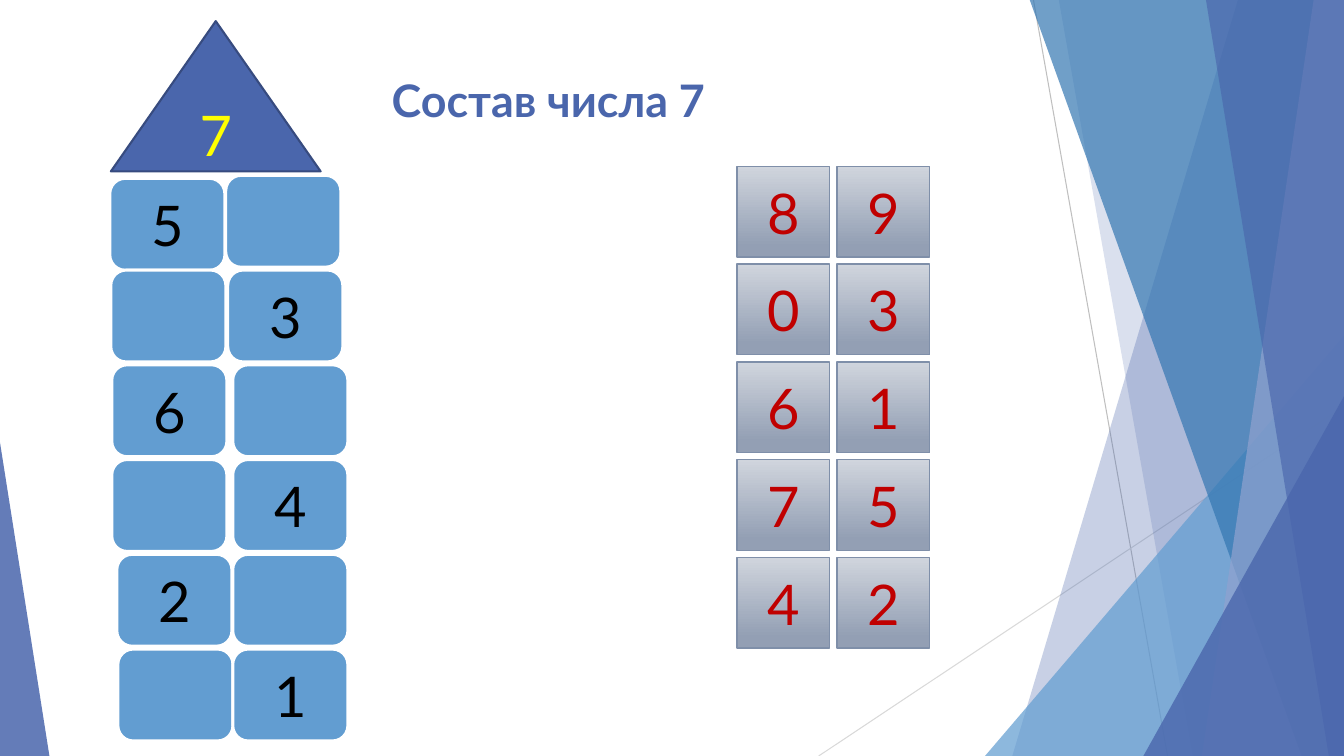
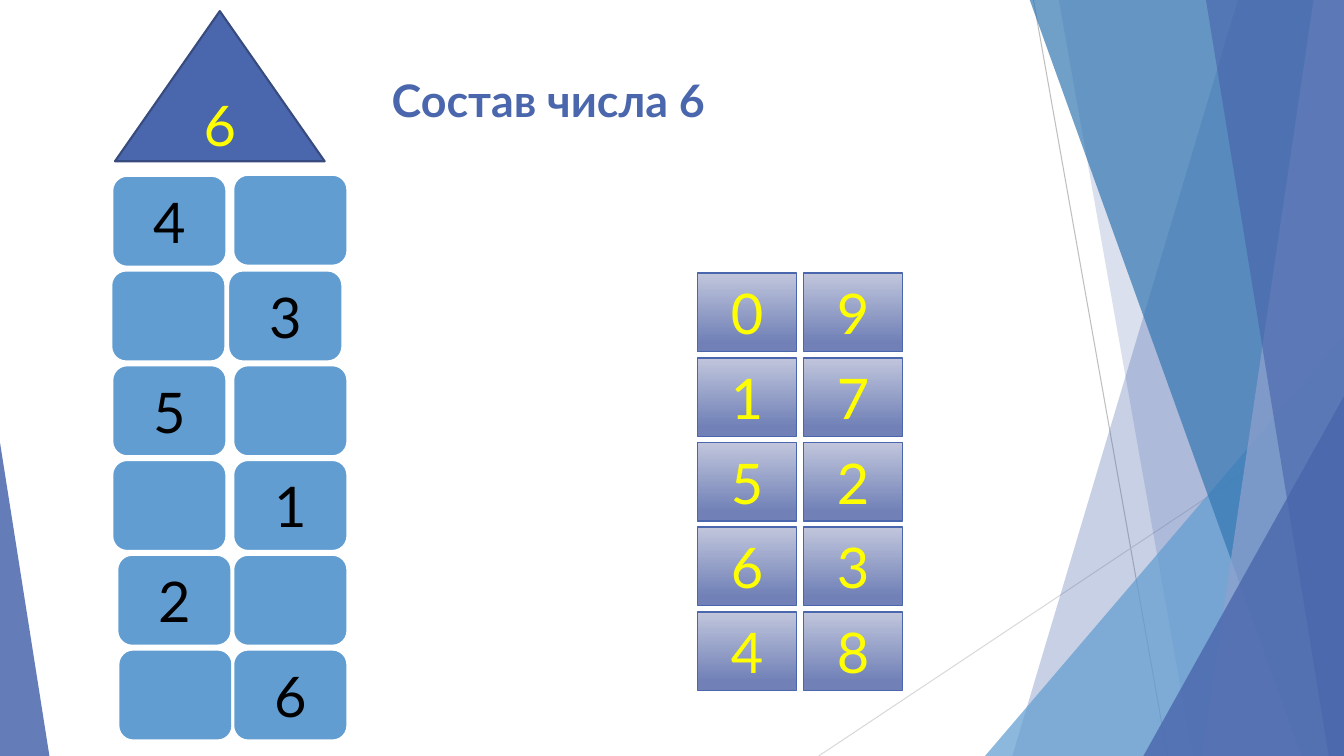
import pptx
import pptx.util
import pptx.dml.color
import pptx.enum.shapes
import pptx.enum.text
import pptx.oxml.ns
import lxml.etree

PX = 9144
WIDE, HIGH = 1333, 750
FONT = "Lato"
NAVY, SKY, EDGE = "4A66AC", "629DD1", "374B7F"
WHITE, BLACK, YELLOW, RED = "FFFFFF", "000000", "FFFF00", "C00000"
KIND = pptx.enum.shapes.MSO_SHAPE
ALIGN = pptx.enum.text.PP_ALIGN
ANCHOR = pptx.enum.text.MSO_ANCHOR

RAYS = [((1025, 0), (1158, 750), "BFBFBF"), ((1333, 403), (812, 750), "D9D9D9")]
BANDS = [
    ("band", (1228, 1004), NAVY, 30),
    ("band", (1050, 1183), NAVY, 20),
    ("peak", (977, 333, 356, 417, 1), SKY, 72),
    ("band", (1021, 1291), "3477B2", 70),
    ("band", (1303, 1192), "90A2CF", 70),
    ("band", (1196, 1318), NAVY, 65),
    ("peak", (1134, 393, 199, 357, 1), NAVY, 80),
    ("peak", (0, 439, 49, 311, 0), NAVY, 85),
]
LOWER = [(110, 226), (111, 231), (111, 231), (116, 231), (117, 231)]
STEP, FIRST = 94, 174
PAGES = [
    {
        "sum": "7", "roof": (110, 21), "top": [(109, 177), (224, 174)],
        "rooms": ["5", "3", "6", "4", "2", "1"],
        "tiles": ["89", "03", "61", "75", "42"],
        "grid": (731, 165, 99, 97), "size": (92, 90),
        "look": ("D0D5DD", "939FB4", "7F8FA9", RED),
    },
    {
        "sum": "6", "roof": (114, 11), "top": [(111, 174), (231, 173)],
        "rooms": ["4", "3", "5", "1", "2", "6"],
        "tiles": ["09", "17", "52", "63", "48"],
        "grid": (692, 271, 105, 84), "size": (98, 78),
        "look": ("C1C6DC", "7181B7", NAVY, YELLOW),
    },
]


def px(*nums):
    """Turn px lengths into EMU."""
    return [pptx.util.Emu(num * PX) for num in nums]


def hue(code):
    """Turn a hex string into a colour."""
    return pptx.dml.color.RGBColor.from_string(code)


def write(shape, text, size, code, bold=False):
    """Put one centred line of text into a shape."""
    frame = shape.text_frame
    frame.text = text
    frame.word_wrap = True
    line = frame.paragraphs[0]
    line.alignment = ALIGN.CENTER
    font = line.runs[0].font
    font.name, font.size, font.bold = FONT, pptx.util.Pt(size), bold
    font.color.rgb = hue(code)


def paint(shape, code):
    """Give a shape a plain fill and no shadow."""
    shape.shadow.inherit = False
    shape.fill.solid()
    shape.fill.fore_color.rgb = hue(code)


def edge(shape, code, width):
    """Set the outline of a shape."""
    shape.line.color.rgb = hue(code)
    shape.line.width = pptx.util.Pt(width)


def label(shape, text, code):
    """Write a digit in the middle of a shape."""
    write(shape, text, 40, code)
    shape.text_frame.vertical_anchor = ANCHOR.MIDDLE


def draw_ray(slide, start, end, code):
    """Draw a thin backdrop line."""
    ray = slide.shapes.add_connector(
        pptx.enum.shapes.MSO_CONNECTOR.STRAIGHT, *px(*start, *end))
    edge(ray, code, 0.75)
    lxml.etree.SubElement(ray.element.spPr, pptx.oxml.ns.qn("a:effectLst"))


def draw_band(slide, top, base):
    """Draw a band from a slanted left side to the slide edge."""
    pen = slide.shapes.build_freeform(top, -1, scale=PX)
    pen.add_line_segments([(WIDE, -1), (WIDE, HIGH), (base, HIGH)])
    return pen.convert_to_shape()


def draw_peak(slide, left, top, wide, high, tip):
    """Draw a right-angled triangle."""
    peak = slide.shapes.add_shape(KIND.ISOSCELES_TRIANGLE, *px(left, top, wide, high))
    peak.adjustments[0] = tip
    return peak


def draw_back(slide):
    """Draw the backdrop that all slides share."""
    for start, end, code in RAYS:
        draw_ray(slide, start, end, code)
    tools = {"band": draw_band, "peak": draw_peak}
    for kind, place, code, alpha in BANDS:
        shape = tools[kind](slide, *place)
        paint(shape, code)
        shape.line.fill.background()
        tint = next(shape.element.spPr.iter(pptx.oxml.ns.qn("a:srgbClr")))
        mark = lxml.etree.SubElement(tint, pptx.oxml.ns.qn("a:alpha"))
        mark.set("val", str(alpha * 1000))


def draw_title(slide, total):
    """Write the slide title."""
    box = slide.shapes.add_textbox(*px(74, 67, 940, 144))
    write(box, f"Состав числа {total}", 32, NAVY, True)


def draw_roof(slide, place, total):
    """Draw the roof with the number to split."""
    roof = slide.shapes.add_shape(KIND.ISOSCELES_TRIANGLE, *px(*place, 208, 149))
    paint(roof, NAVY)
    edge(roof, EDGE, 1.5)
    label(roof, total, YELLOW)


def draw_room(slide, left, top, digit):
    """Draw one room of the house, with or without a digit."""
    room = slide.shapes.add_shape(KIND.ROUNDED_RECTANGLE, *px(left, top, 114, 91))
    paint(room, SKY)
    edge(room, WHITE, 2)
    if digit:
        label(room, digit, BLACK)


def draw_house(slide, top, digits):
    """Draw the rooms, with the known digit on alternating sides."""
    rows = [top]
    for row, lefts in enumerate(LOWER, 1):
        rows.append([(left, FIRST + row * STEP) for left in lefts])
    for row, spots in enumerate(rows):
        for col, spot in enumerate(spots):
            draw_room(slide, *spot, digits[row] if col == row % 2 else "")


def draw_tile(slide, place, digit, look):
    """Draw one answer tile with a downward gradient."""
    light, dark, rim, ink = look
    tile = slide.shapes.add_shape(KIND.RECTANGLE, *px(*place))
    tile.shadow.inherit = False
    tile.fill.gradient()
    tile.fill.gradient_angle = 270
    for stop, code, spot in zip(tile.fill.gradient_stops, (light, dark), (0, 0.88)):
        stop.color.rgb = hue(code)
        stop.position = spot
    edge(tile, rim, 1)
    label(tile, digit, ink)


def draw_tiles(slide, rows, grid, size, look):
    """Lay the answer tiles out in two columns."""
    left, top, across, down = grid
    for row, digits in enumerate(rows):
        for col, digit in enumerate(digits):
            place = (left + col * across, top + row * down, *size)
            draw_tile(slide, place, digit, look)


def main():
    """Build the deck."""
    deck = pptx.Presentation()
    deck.slide_width, deck.slide_height = px(WIDE, HIGH)
    for page in PAGES:
        slide = deck.slides.add_slide(deck.slide_layouts[6])
        draw_back(slide)
        draw_title(slide, page["sum"])
        draw_roof(slide, page["roof"], page["sum"])
        draw_house(slide, page["top"], page["rooms"])
        draw_tiles(slide, page["tiles"], page["grid"], page["size"], page["look"])
    deck.save("out.pptx")


if __name__ == "__main__":
    main()
